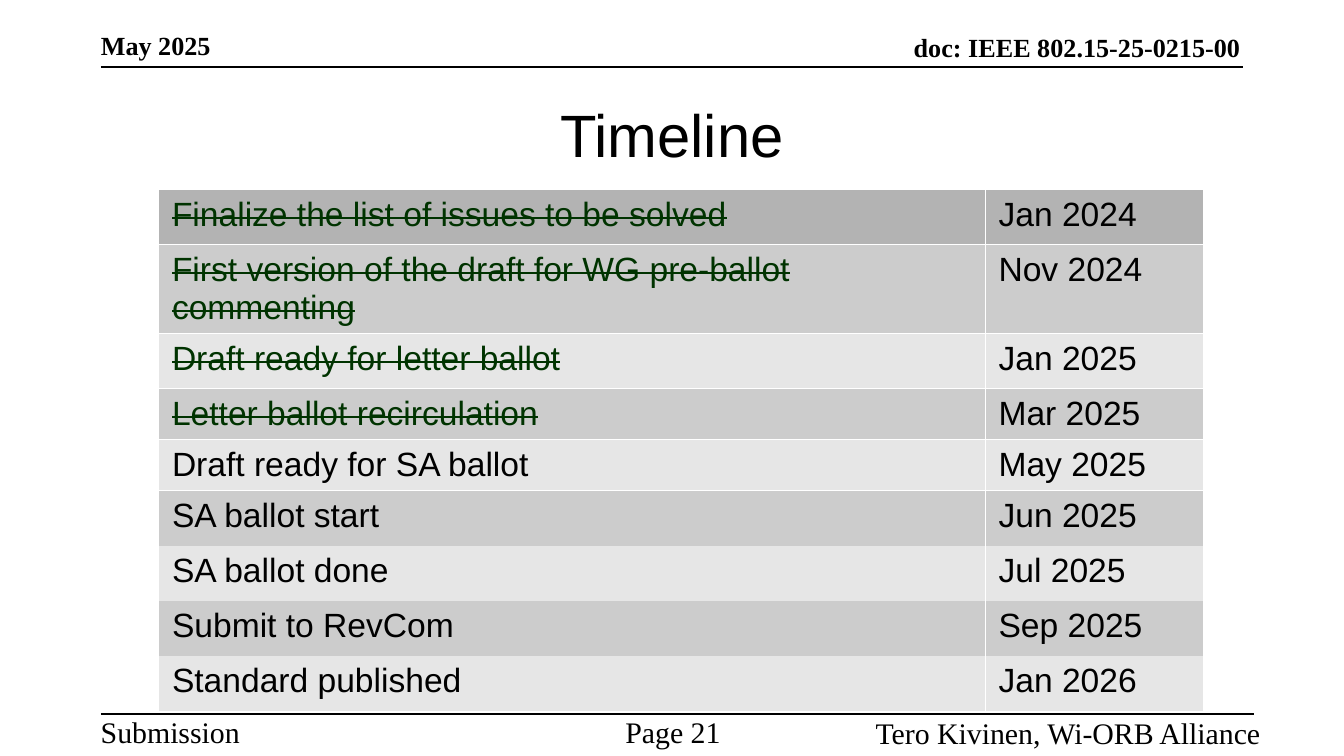
from typing import NamedTuple

from lxml import etree
from pptx import Presentation
from pptx.dml.color import RGBColor
from pptx.enum.shapes import MSO_CONNECTOR
from pptx.enum.text import MSO_ANCHOR, PP_ALIGN
from pptx.oxml.ns import qn
from pptx.util import Inches, Pt

LEFT, CENTER, RIGHT = PP_ALIGN.LEFT, PP_ALIGN.CENTER, PP_ALIGN.RIGHT
TOP, MIDDLE, BOTTOM = MSO_ANCHOR.TOP, MSO_ANCHOR.MIDDLE, MSO_ANCHOR.BOTTOM
STRAIGHT = MSO_CONNECTOR.STRAIGHT

SERIF, SANS = "Times New Roman", "Arial"
BLACK, WHITE, DONE_GREEN = "000000", "FFFFFF", "003300"
HEADER_GRAY, DARK_BAND, LIGHT_BAND = "B3B3B3", "CCCCCC", "E6E6E6"
BORDER_WIDTH = Pt(0.06)
RULED_ROWS = 6  # rows with a line above them


class Label(NamedTuple):
    text: str
    box: tuple[float, float, float, float]
    size: int
    font: str = SERIF
    bold: bool = False
    align: PP_ALIGN = LEFT
    anchor: MSO_ANCHOR = TOP


class Milestone(NamedTuple):
    task: str
    date: str
    height: float = 0.41
    done: bool = False


LABELS = [
    Label("May 2025", (0.75, 0.3, 2.79, 0.15), 14, bold=True, anchor=BOTTOM),
    Label("doc: IEEE 802.15-25-0215-00", (3.39, 0.32, 5.84, 0.15), 14,
          bold=True, align=RIGHT, anchor=BOTTOM),
    Label("Timeline", (0.5, 0.48, 9, 1.03), 32, font=SANS, align=CENTER, anchor=MIDDLE),
    Label("Submission", (0.75, 5.31, 1.87, 0.23), 16),
    Label("Page 21 ", (4.1, 5.31, 1.87, 0.23), 16, align=CENTER),
    Label("Tero Kivinen, Wi-ORB Alliance", (5.71, 5.32, 3.67, 0.23), 16, align=RIGHT),
]

MILESTONES = [
    Milestone("Finalize the list of issues to be solved", "Jan 2024", done=True),
    Milestone("First version of the draft for WG pre-ballot commenting", "Nov 2024",
              height=0.66, done=True),
    Milestone("Draft ready for letter ballot", "Jan 2025", done=True),
    Milestone("Letter ballot recirculation", "Mar 2025", height=0.38, done=True),
    Milestone("Draft ready for SA ballot", "May 2025", height=0.38),
    Milestone("SA ballot start", "Jun 2025"),
    Milestone("SA ballot done", "Jul 2025"),
    Milestone("Submit to RevCom", "Sep 2025"),
    Milestone("Standard published", "Jan 2026"),
]


def color(value: str) -> RGBColor:
    return RGBColor.from_string(value)


def write_text(frame, text: str, *, size: int, font: str, fill: str = BLACK,
               bold: bool = False, strike: bool = False, align: PP_ALIGN = LEFT) -> None:
    paragraph = frame.paragraphs[0]
    paragraph.alignment = align
    run = paragraph.add_run()
    run.text = text
    run.font.size, run.font.name, run.font.bold = Pt(size), font, bold
    run.font.color.rgb = color(fill)
    if strike:
        run.font._element.set("strike", "sngStrike")


def add_label(slide, label: Label) -> None:
    shape = slide.shapes.add_textbox(*map(Inches, label.box))
    frame = shape.text_frame
    frame.word_wrap = True
    frame.margin_left = frame.margin_right = frame.margin_top = frame.margin_bottom = 0
    frame.vertical_anchor = label.anchor
    write_text(frame, label.text, size=label.size, font=label.font,
               bold=label.bold, align=label.align)


def add_rule(slide, left: float, right: float, top: float) -> None:
    line = slide.shapes.add_connector(
        STRAIGHT, Inches(left), Inches(top), Inches(right), Inches(top))
    line.line.color.rgb = color(BLACK)
    line.line.width = Pt(1)
    etree.SubElement(line._element.spPr, qn("a:effectLst"))


def set_borders(cell, visible: str) -> None:
    """Draw the sides named in visible (L, R, T, B) and hide the others."""
    properties = cell._tc.get_or_add_tcPr()
    for position, side in enumerate("LRTB"):
        border = etree.Element(qn(f"a:ln{side}"), w=str(BORDER_WIDTH))
        if side in visible:
            fill = etree.SubElement(border, qn("a:solidFill"))
            etree.SubElement(fill, qn("a:srgbClr"), val=WHITE)
        else:
            etree.SubElement(border, qn("a:noFill"))
        properties.insert(position, border)


def add_timeline(slide, milestones: list[Milestone]) -> None:
    height = sum(milestone.height for milestone in milestones)
    table = slide.shapes.add_table(len(milestones), 2, Inches(1.18), Inches(1.41),
                                   Inches(7.78), Inches(height)).table
    table.first_row = table.horz_banding = False
    for column, width in zip(table.columns, (6.15, 1.62)):
        column.width = Inches(width)
    last = len(milestones) - 1
    for index, milestone in enumerate(milestones):
        table.rows[index].height = Inches(milestone.height)
        band = DARK_BAND if index % 2 else LIGHT_BAND
        sides = "LR"
        if index < RULED_ROWS:
            sides += "T"
        if index < RULED_ROWS - 1 or index == last:
            sides += "B"
        for column, text in enumerate((milestone.task, milestone.date)):
            cell = table.cell(index, column)
            cell.margin_bottom = Inches(0.01)  # keeps the tight rows at their height
            cell.fill.solid()
            cell.fill.fore_color.rgb = color(band if index else HEADER_GRAY)
            set_borders(cell, sides)
            struck = milestone.done and column == 0
            write_text(cell.text_frame, text, size=18, font=SANS, strike=struck,
                       fill=DONE_GREEN if struck else BLACK)


def main() -> None:
    presentation = Presentation()
    # 16:9 page
    presentation.slide_width = Inches(10)
    presentation.slide_height = Inches(10 * 9 / 16)
    slide = presentation.slides.add_slide(presentation.slide_layouts[6])

    # Header and footer rules
    add_rule(slide, 0.75, 9.25, 0.5)
    add_rule(slide, 0.75, 9.33, 5.31)

    # Title, header and footer text
    for label in LABELS:
        add_label(slide, label)

    # Milestone table
    add_timeline(slide, MILESTONES)
    presentation.save("out.pptx")


if __name__ == "__main__":
    main()
